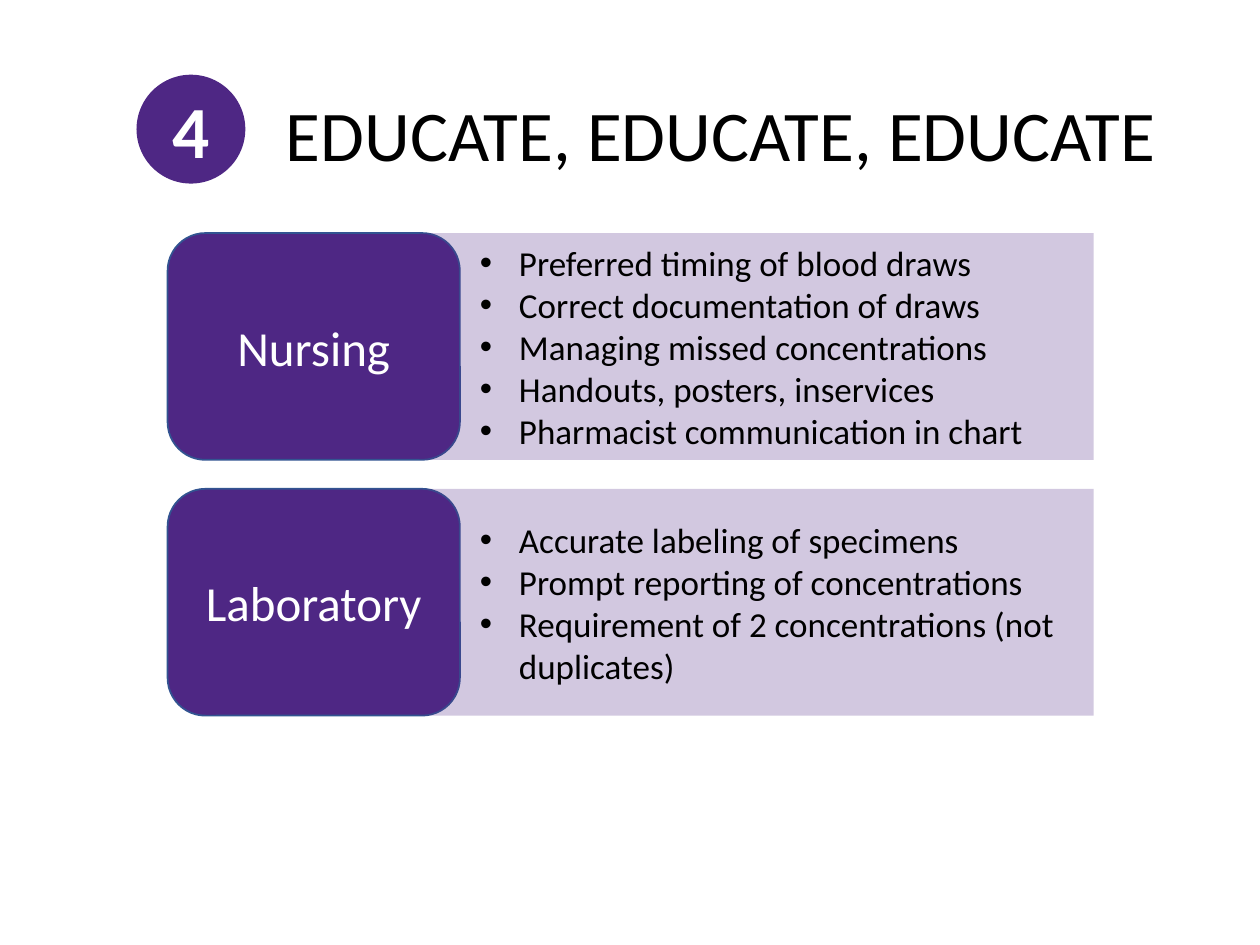
"""Builds the staff education slide: a numbered title above one row per team."""
from lxml import etree
from pptx import Presentation
from pptx.dml.color import RGBColor
from pptx.enum.shapes import MSO_SHAPE
from pptx.enum.text import MSO_ANCHOR, PP_ALIGN
from pptx.oxml.ns import qn
from pptx.util import Inches, Pt

OVAL, ROUNDED, RECT = MSO_SHAPE.OVAL, MSO_SHAPE.ROUNDED_RECTANGLE, MSO_SHAPE.RECTANGLE
MIDDLE, BOTTOM = MSO_ANCHOR.MIDDLE, MSO_ANCHOR.BOTTOM
LEFT, CENTER = PP_ALIGN.LEFT, PP_ALIGN.CENTER

STEP = "4"
TITLE = "EDUCATE, EDUCATE, EDUCATE"
TEAMS = [
    ("Nursing", [
        "Preferred timing of blood draws",
        "Correct documentation of draws",
        "Managing missed concentrations",
        "Handouts, posters, inservices",
        "Pharmacist communication in chart",
    ]),
    ("Laboratory", [
        "Accurate labeling of specimens",
        "Prompt reporting of concentrations",
        "Requirement of 2 concentrations (not duplicates)",
    ]),
]

THEME = {
    "purple": RGBColor.from_string("4E2784"),
    "edge": RGBColor.from_string("325491"),
    "tint": 25,
    "title": {"name": "Calibri", "size": Pt(40.7), "color": RGBColor(0, 0, 0)},
    "step": {"name": "Calibri", "size": Pt(42), "bold": True, "color": RGBColor(255, 255, 255)},
    "team": {"name": "Calibri", "size": Pt(28), "color": RGBColor(255, 255, 255)},
    "topic": {"name": "Calibri", "size": Pt(20), "color": RGBColor(0, 0, 0)},
}

SLIDE_W, SLIDE_H = 10, 7.5
HEADER_TOP, BADGE_LEFT, BADGE_SIZE, TITLE_W = 0.6, 1.09, 0.85, 7.56
TEAM_LEFT, TEAM_W = 1.33, 2.32
TOPICS_LEFT, TOPICS_W = 3.33, 5.35
ROWS_TOP, ROW_H, ROW_GAP = 1.85, 1.8, 0.23
INDENT, HANGING = 0.69, 0.31


def add_bullet(paragraph):
    properties = paragraph._p.get_or_add_pPr()
    properties.set("marL", str(Inches(INDENT)))
    properties.set("indent", str(-Inches(HANGING)))
    etree.SubElement(properties, qn("a:buFont")).set("typeface", "Arial")
    etree.SubElement(properties, qn("a:buChar")).set("char", "•")


def write(holder, lines, style, align=CENTER, anchor=MIDDLE, bulleted=False, spacing=None):
    frame = holder.text_frame
    frame.word_wrap = True
    frame.vertical_anchor = anchor
    for number, line in enumerate(lines):
        paragraph = frame.add_paragraph() if number else frame.paragraphs[0]
        paragraph.alignment = align
        paragraph.line_spacing = spacing
        if bulleted:
            add_bullet(paragraph)
        run = paragraph.add_run()
        run.text = line
        for attribute, value in THEME[style].items():
            if attribute == "color":
                run.font.color.rgb = value
            else:
                setattr(run.font, attribute, value)


def add_panel(slide, kind, box, edge=None, opacity=None):
    panel = slide.shapes.add_shape(kind, *map(Inches, box))
    panel.shadow.inherit = False
    panel.fill.solid()
    panel.fill.fore_color.rgb = THEME["purple"]
    if opacity:
        color = panel._element.spPr.find(qn("a:solidFill"))[0]
        etree.SubElement(color, qn("a:alpha")).set("val", str(opacity * 1000))
    if edge:
        panel.line.color.rgb = THEME[edge]
        panel.line.width = Pt(1)
    else:
        panel.line.fill.background()
    return panel


def main():
    deck = Presentation()
    deck.slide_width, deck.slide_height = Inches(SLIDE_W), Inches(SLIDE_H)
    slide = deck.slides.add_slide(deck.slide_layouts[6])

    title_box = (BADGE_LEFT + BADGE_SIZE, HEADER_TOP, TITLE_W, BADGE_SIZE)
    title = slide.shapes.add_textbox(*map(Inches, title_box))
    write(title, [TITLE], "title", anchor=BOTTOM, spacing=0.9)
    badge_box = (BADGE_LEFT, HEADER_TOP, BADGE_SIZE, BADGE_SIZE)
    badge = add_panel(slide, OVAL, badge_box, edge="purple")
    write(badge, [STEP], "step")

    for row, (team, topics) in enumerate(TEAMS):
        top = ROWS_TOP + row * (ROW_H + ROW_GAP)
        team_panel = add_panel(slide, ROUNDED, (TEAM_LEFT, top, TEAM_W, ROW_H), edge="edge")
        write(team_panel, [team], "team")
        topics_box = (TOPICS_LEFT, top, TOPICS_W, ROW_H)
        topics_panel = add_panel(slide, RECT, topics_box, opacity=THEME["tint"])
        write(topics_panel, topics, "topic", align=LEFT, bulleted=True)

    deck.save("out.pptx")


if __name__ == "__main__":
    main()
